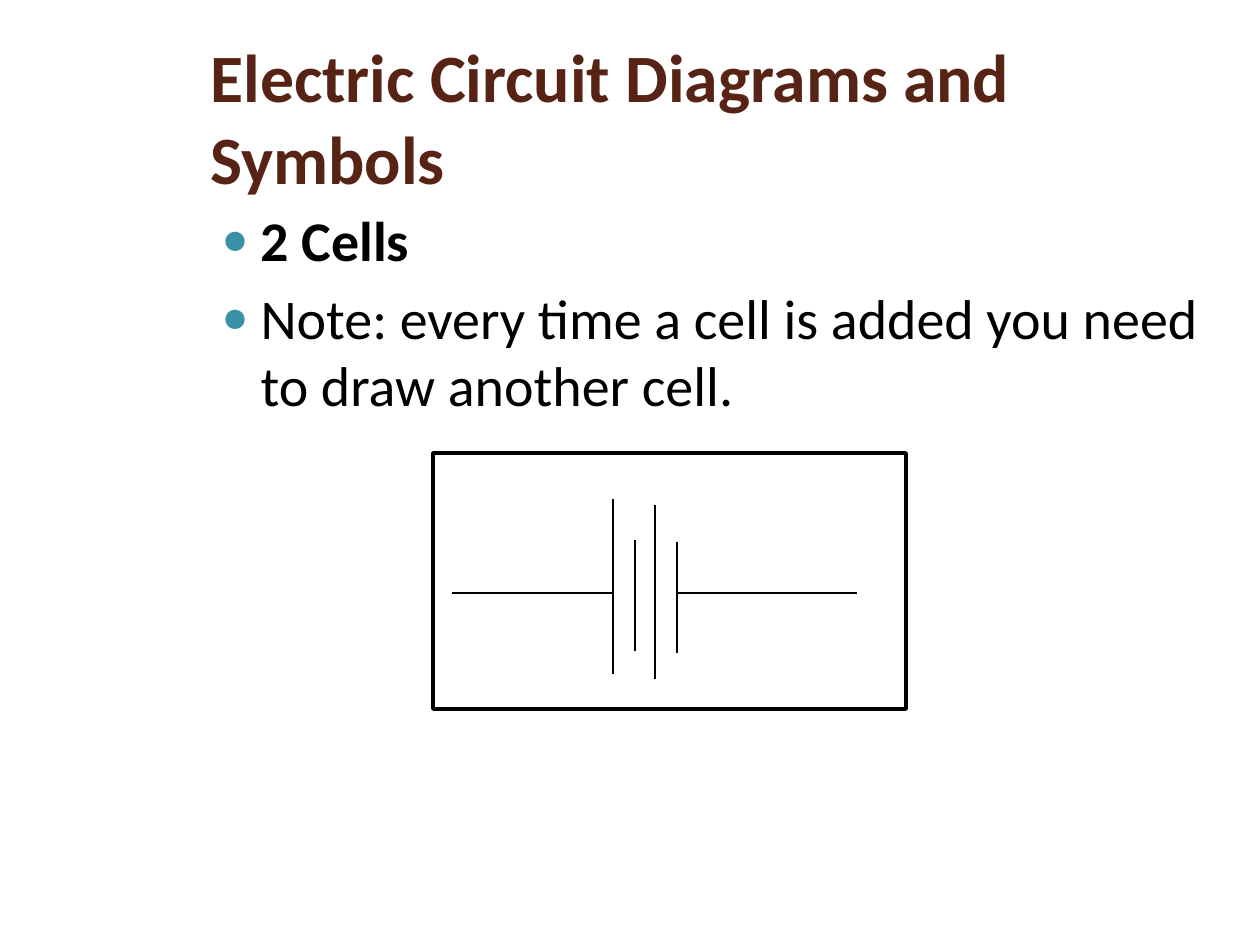
from lxml import etree
from pptx import Presentation
from pptx import util as u
from pptx.dml.color import RGBColor
from pptx.enum import shapes, text
from pptx.oxml import ns

EMU_PER_PX = 914400 / 126
FONT = "Calibri"
BLACK, WHITE, BROWN, TEAL = "000000", "FFFFFF", "572314", "3891A7"

WIRE_Y = 593
WIRES = [(452, 612), (677, 857)]
# x, top and bottom of each plate, long and short in turn
PLATES = [(613, 499, 674), (635, 540, 651), (655, 505, 679), (677, 542, 653)]


def px(length):
    return u.Emu(round(length * EMU_PER_PX))


def color(code):
    return RGBColor.from_string(code)


def place(placeholder, left, top, width, height, anchor):
    placeholder.left, placeholder.top = px(left), px(top)
    placeholder.width, placeholder.height = px(width), px(height)
    frame = placeholder.text_frame
    frame.word_wrap = True
    frame.auto_size = text.MSO_AUTO_SIZE.NONE
    frame.vertical_anchor = anchor
    return frame


def write(paragraph, words, size, code, bold):
    paragraph.text = words
    paragraph.alignment = text.PP_ALIGN.LEFT
    font = paragraph.font
    font.name, font.size, font.bold = FONT, u.Pt(size), bold
    font.color.rgb = color(code)


def add_bullet(paragraph):
    paragraph.space_before = u.Pt(6)
    props = paragraph._p.get_or_add_pPr()
    props.set("marL", str(px(50)))
    props.set("indent", str(px(-39)))
    bullet_color = etree.SubElement(props, ns.qn("a:buClr"))
    etree.SubElement(bullet_color, ns.qn("a:srgbClr"), val=TEAL)
    etree.SubElement(props, ns.qn("a:buSzPct"), val="80000")
    etree.SubElement(props, ns.qn("a:buChar"), char="●")


def add_frame(slide, left, top, width, height):
    """Add the diagram's border behind the slide text."""
    border = slide.shapes.add_shape(
        shapes.MSO_SHAPE.RECTANGLE, px(left), px(top), px(width), px(height))
    border.shadow.inherit = False
    border.fill.solid()
    border.fill.fore_color.rgb = color(WHITE)
    border.line.color.rgb = color(BLACK)
    border.line.width = u.Pt(2)
    slide.shapes.title.element.addprevious(border.element)


def add_line(group, x1, y1, x2, y2):
    line = group.shapes.add_connector(
        shapes.MSO_CONNECTOR.STRAIGHT, px(x1), px(y1), px(x2), px(y2))
    line.line.color.rgb = color(BLACK)
    line.line.width = u.Pt(0.75)
    etree.SubElement(line.element.spPr, ns.qn("a:effectLst"))


def add_cells(slide):
    circuit = slide.shapes.add_group_shape()
    for start, end in WIRES:
        add_line(circuit, start, WIRE_Y, end, WIRE_Y)
    for x, top, bottom in PLATES:
        add_line(circuit, x, top, x, bottom)


def main():
    deck = Presentation()
    deck.slide_width, deck.slide_height = px(1260), px(945)
    slide = deck.slides.add_slide(deck.slide_layouts[1])

    title = place(slide.shapes.title, 198, 38, 1033, 157, text.MSO_ANCHOR.MIDDLE)
    write(title.paragraphs[0], "Electric Circuit Diagrams and Symbols", 38.7, BROWN, True)

    body = place(slide.placeholders[1], 198, 199, 1033, 662, text.MSO_ANCHOR.TOP)
    heading, note = body.paragraphs[0], body.add_paragraph()
    write(heading, "2 Cells", 32, BLACK, True)
    write(note, "Note: every time a cell is added you need to draw another cell.",
          32, BLACK, False)
    for item in (heading, note):
        add_bullet(item)

    add_frame(slide, 433, 453, 473, 256)
    add_cells(slide)
    deck.save("out.pptx")


if __name__ == "__main__":
    main()
